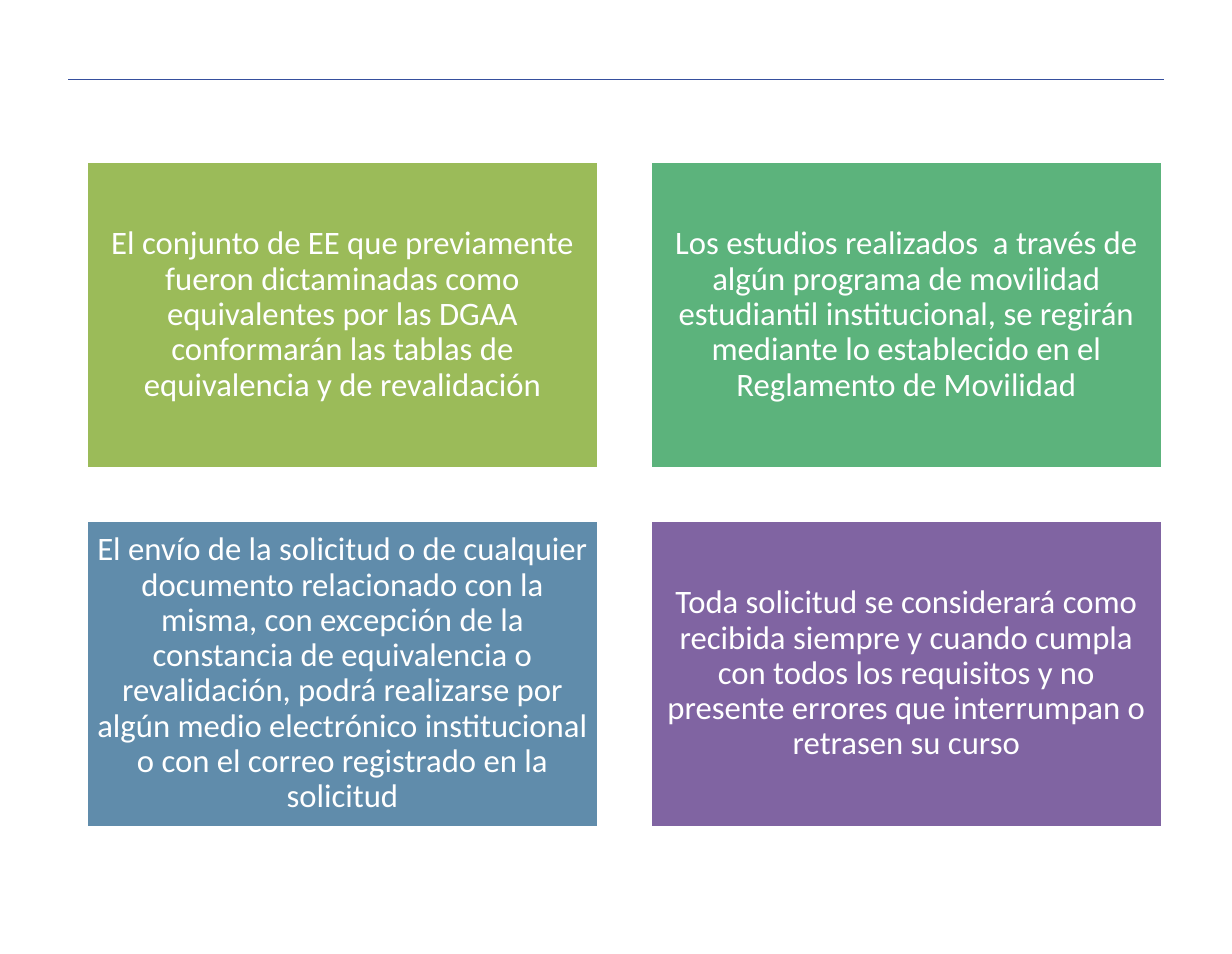
import pptx
import pptx.dml.color
import pptx.enum.shapes
import pptx.enum.text
import pptx.util
import lxml.etree
import pptx.oxml.ns

RULES = [
    ("9BBB59", "El conjunto de EE que previamente fueron dictaminadas como equivalentes por las DGAA conformarán las tablas de equivalencia y de revalidación"),
    ("5CB37C", "Los estudios realizados  a través de algún programa de movilidad estudiantil institucional, se regirán mediante lo establecido en el Reglamento de Movilidad"),
    ("608CAB", "El envío de la solicitud o de cualquier documento relacionado con la misma, con excepción de la constancia de equivalencia o revalidación, podrá realizarse por algún medio electrónico institucional o con el correo registrado en la solicitud"),
    ("8064A2", "Toda solicitud se considerará como recibida siempre y cuando cumpla con todos los requisitos y no presente errores que interrumpan o retrasen su curso"),
]
PAGE_WIDTH, PAGE_HEIGHT = 1099, 851
COLUMNS = 2
GRID_LEFT, GRID_TOP = 77, 144
CARD_WIDTH, CARD_HEIGHT = 457, 274
GAP = 46
INSET = 9
LINE_LEFT, LINE_RIGHT, LINE_TOP = 61, 1038, 71


def px(length):
    return pptx.util.Emu(length * 9144)


def color(value):
    return pptx.dml.color.RGBColor.from_string(value)


def write(box, text, size=21, font="Calibri", ink="FFFFFF", spacing=0.9):
    frame = box.text_frame
    frame.word_wrap = True
    frame.vertical_anchor = pptx.enum.text.MSO_ANCHOR.MIDDLE
    frame.margin_left = frame.margin_right = px(INSET)
    frame.margin_top = frame.margin_bottom = px(INSET)
    para = frame.paragraphs[0]
    para.alignment = pptx.enum.text.PP_ALIGN.CENTER
    para.line_spacing = spacing
    span = para.add_run()
    span.text = text
    span.font.size = pptx.util.Pt(size)
    span.font.name = font
    span.font.color.rgb = color(ink)


def add_header_line(page):
    line = page.shapes.add_connector(
        pptx.enum.shapes.MSO_CONNECTOR.STRAIGHT,
        px(LINE_LEFT), px(LINE_TOP), px(LINE_RIGHT), px(LINE_TOP))
    line.line.color.rgb = color("364F9D")
    line.line.width = pptx.util.Pt(0.75)
    properties = line._element.spPr
    lxml.etree.SubElement(properties, pptx.oxml.ns.qn("a:effectLst"))


def add_card(page, index, fill, text):
    row, column = divmod(index, COLUMNS)
    left = GRID_LEFT + column * (CARD_WIDTH + GAP)
    top = GRID_TOP + row * (CARD_HEIGHT + GAP)
    card = page.shapes.add_shape(
        pptx.enum.shapes.MSO_SHAPE.RECTANGLE,
        px(left), px(top), px(CARD_WIDTH), px(CARD_HEIGHT))
    card.shadow.inherit = False
    card.fill.solid()
    card.fill.fore_color.rgb = color(fill)
    card.line.color.rgb = color("FFFFFF")
    card.line.width = pptx.util.Pt(2)
    write(card, text)


def main():
    deck = pptx.Presentation()
    deck.slide_width, deck.slide_height = px(PAGE_WIDTH), px(PAGE_HEIGHT)
    page = deck.slides.add_slide(deck.slide_layouts[6])
    add_header_line(page)
    for index, (fill, text) in enumerate(RULES):
        add_card(page, index, fill, text)
    deck.save("out.pptx")


if __name__ == "__main__":
    main()
